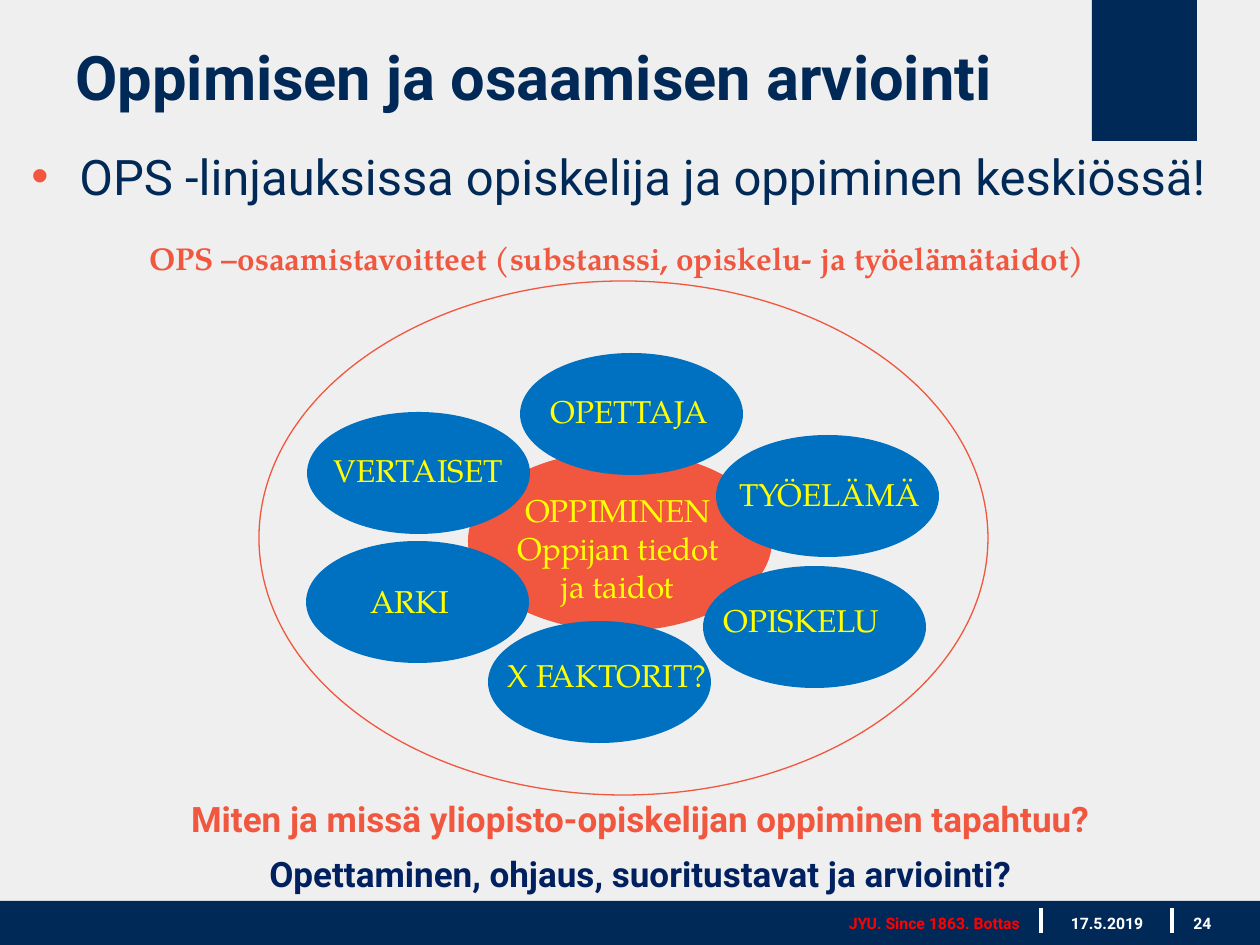
"""Builds the slide on assessing learning and competence."""
from lxml import etree
from pptx import Presentation
from pptx.dml.color import RGBColor
from pptx.enum.shapes import MSO_CONNECTOR, MSO_SHAPE
from pptx.enum.text import MSO_ANCHOR, PP_ALIGN
from pptx.oxml.ns import qn
from pptx.util import Pt

EMU_PER_PX = 914400 / 126
LEFT, CENTER, RIGHT = PP_ALIGN.LEFT, PP_ALIGN.CENTER, PP_ALIGN.RIGHT
TOP, MIDDLE = MSO_ANCHOR.TOP, MSO_ANCHOR.MIDDLE
RECT, OVAL = MSO_SHAPE.RECTANGLE, MSO_SHAPE.OVAL
STRAIGHT = MSO_CONNECTOR.STRAIGHT
SANS, SERIF = "Roboto", "TeX Gyre Pagella"
COLORS = {
    "background": "EEEFEE", "navy": "002957", "deep": "002060", "coral": "F1563F",
    "blue": "0070C0", "yellow": "FFFF00", "red": "FF0000", "white": "FFFFFF",
}
NODE_W, NODE_H, LABEL_H = 223, 122, 50
NODES = [
    ("OPETTAJA", (520, 353), (538, 386)),
    ("X FAKTORIT?", (488, 621), (495, 650)),
    ("OPISKELU", (703, 566), (711, 595)),
    ("TYÖELÄMÄ", (716, 435), (727, 469)),
    ("ARKI", (306, 541), (358, 576)),
    ("VERTAISET", (307, 412), (321, 445)),
]


def px(n):
    """Turn pixels into EMU."""
    return round(n * EMU_PER_PX)


def rgb(name):
    """Look up a named colour."""
    return RGBColor.from_string(COLORS[name])


def add_figure(s, kind, x, y, w, h, fill=None, line=None):
    """Add a preset shape with an optional fill and outline."""
    sp = s.shapes.add_shape(kind, px(x), px(y), px(w), px(h))
    sp.shadow.inherit = False
    if fill:
        sp.fill.solid()
        sp.fill.fore_color.rgb = rgb(fill)
    else:
        sp.fill.background()
    if line:
        sp.line.color.rgb = rgb(line)
        sp.line.width = Pt(0.75)
    else:
        sp.line.fill.background()


def add_divider(s, x):
    """Add a white vertical line in the footer."""
    c = s.shapes.add_connector(STRAIGHT, px(x), px(908), px(x), px(933))
    c.line.color.rgb = rgb("white")
    c.line.width = Pt(2)
    etree.SubElement(c._element.spPr, qn("a:effectLst"))


def add_bullet(p, color, indent):
    """Give a paragraph a coloured bullet with a hanging indent."""
    pPr = p._p.get_or_add_pPr()
    pPr.set("marL", str(px(indent)))
    pPr.set("indent", str(-px(indent)))
    clr = etree.SubElement(pPr, qn("a:buClr"))
    etree.SubElement(clr, qn("a:srgbClr"), val=COLORS[color])
    etree.SubElement(pPr, qn("a:buFont"), typeface="Arial")
    etree.SubElement(pPr, qn("a:buChar"), char="•")


def add_text(s, text, x, y, w, h, size=18, font=SERIF, colors=("yellow",),
             bold=False, align=LEFT, anchor=TOP, before=0, bullet=None):
    """Add a text box with one paragraph per line and colours in turn."""
    tf = s.shapes.add_textbox(px(x), px(y), px(w), px(h)).text_frame
    tf.word_wrap = True
    tf.vertical_anchor = anchor
    for i, line in enumerate(text.split("\n")):
        p = tf.add_paragraph() if i else tf.paragraphs[0]
        p.alignment = align
        if i and before:
            p.space_before = Pt(before)
        if bullet:
            add_bullet(p, bullet, 48)
        r = p.add_run()
        r.text = line
        r.font.size = Pt(size)
        r.font.name = font
        r.font.bold = bold
        r.font.color.rgb = rgb(colors[i % len(colors)])


def add_footer(s):
    """Add the footer band with its texts and dividers."""
    add_figure(s, RECT, 0, 901, 1260, 44, fill="navy")
    for x in (1041, 1172):
        add_divider(s, x)
    for text, x, w, color, align in [
        ("JYU. Since 1863. Bottas", 736, 296, "red", RIGHT),
        ("17.5.2019", 1050, 114, "white", CENTER),
        ("24", 1181, 63, "white", LEFT),
    ]:
        add_text(s, text, x, 908, w, 25, size=9, font=SANS, colors=(color,),
                 bold=True, align=align)


def add_diagram(s):
    """Add the learner in the middle and the factors around it."""
    add_figure(s, OVAL, 468, 451, 304, 180, fill="coral")
    add_text(s, "OPPIMINEN\nOppijan tiedot ja taidot", 497, 485, 242, 127, align=CENTER)
    add_figure(s, OVAL, 259, 281, 729, 514, line="coral")
    for text, node, label in NODES:
        add_figure(s, OVAL, *node, NODE_W, NODE_H, fill="blue")
        add_text(s, text, *label, 242, LABEL_H)


def main():
    """Build and save the slide."""
    prs = Presentation()
    prs.slide_width, prs.slide_height = px(1260), px(945)
    s = prs.slides.add_slide(prs.slide_layouts[6])
    s.background.fill.solid()
    s.background.fill.fore_color.rgb = rgb("background")
    add_figure(s, RECT, 1092, 0, 105, 141, fill="navy")
    add_footer(s)
    add_text(s, "Oppimisen ja osaamisen arviointi", 63, 5, 1016, 141, size=35.1,
             font=SANS, colors=("navy",), bold=True, anchor=MIDDLE)
    add_text(s, "OPS -linjauksissa opiskelija ja oppiminen keskiössä!", 19, 140, 1241, 91,
             size=28, font=SANS, colors=("navy",), bullet="coral")
    add_text(s, "OPS –osaamistavoitteet (substanssi, opiskelu- ja työelämätaidot)",
             137, 233, 1072, LABEL_H, colors=("coral",), bold=True)
    add_diagram(s)
    add_text(s, "Miten ja missä yliopisto-opiskelijan oppiminen tapahtuu?\n"
             "Opettaminen, ohjaus, suoritustavat ja arviointi?", 86, 791, 1109, 120,
             size=20, font=SANS, colors=("coral", "deep"), bold=True, align=CENTER,
             before=7.7)
    prs.save("out.pptx")


if __name__ == "__main__":
    main()
